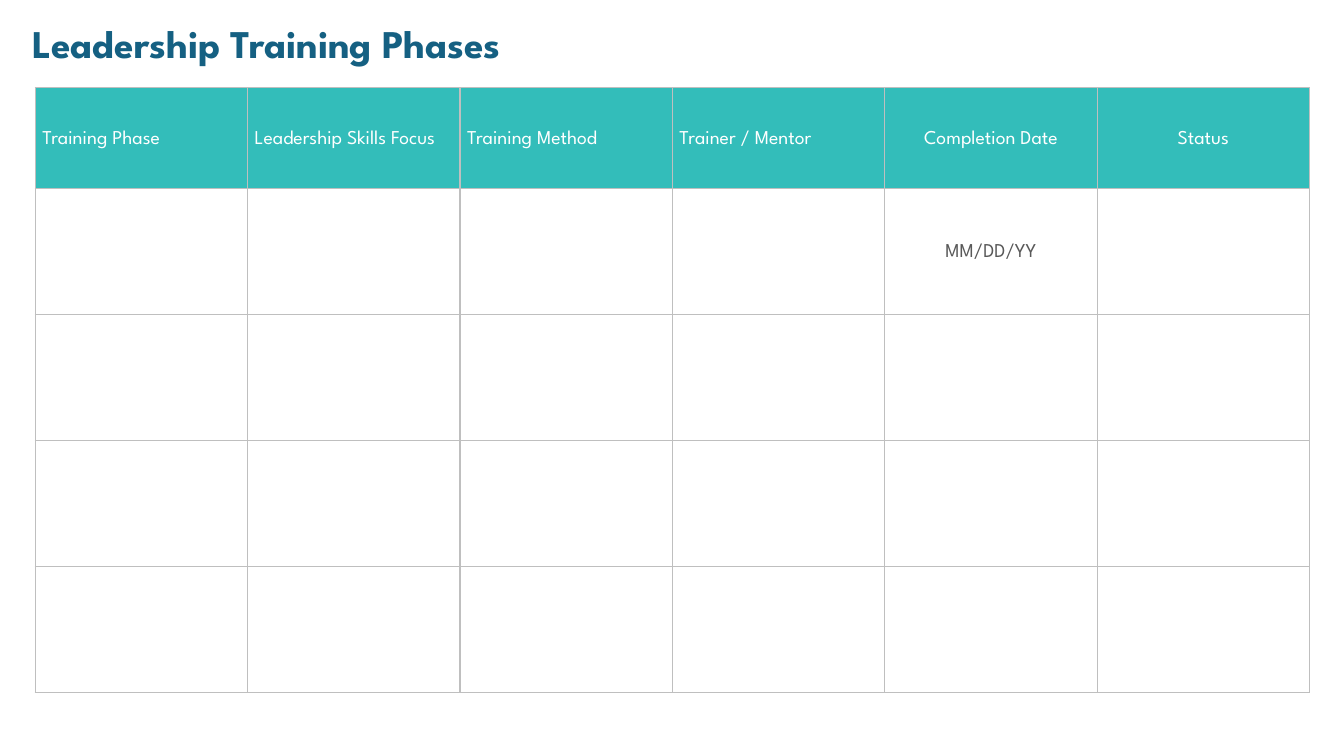
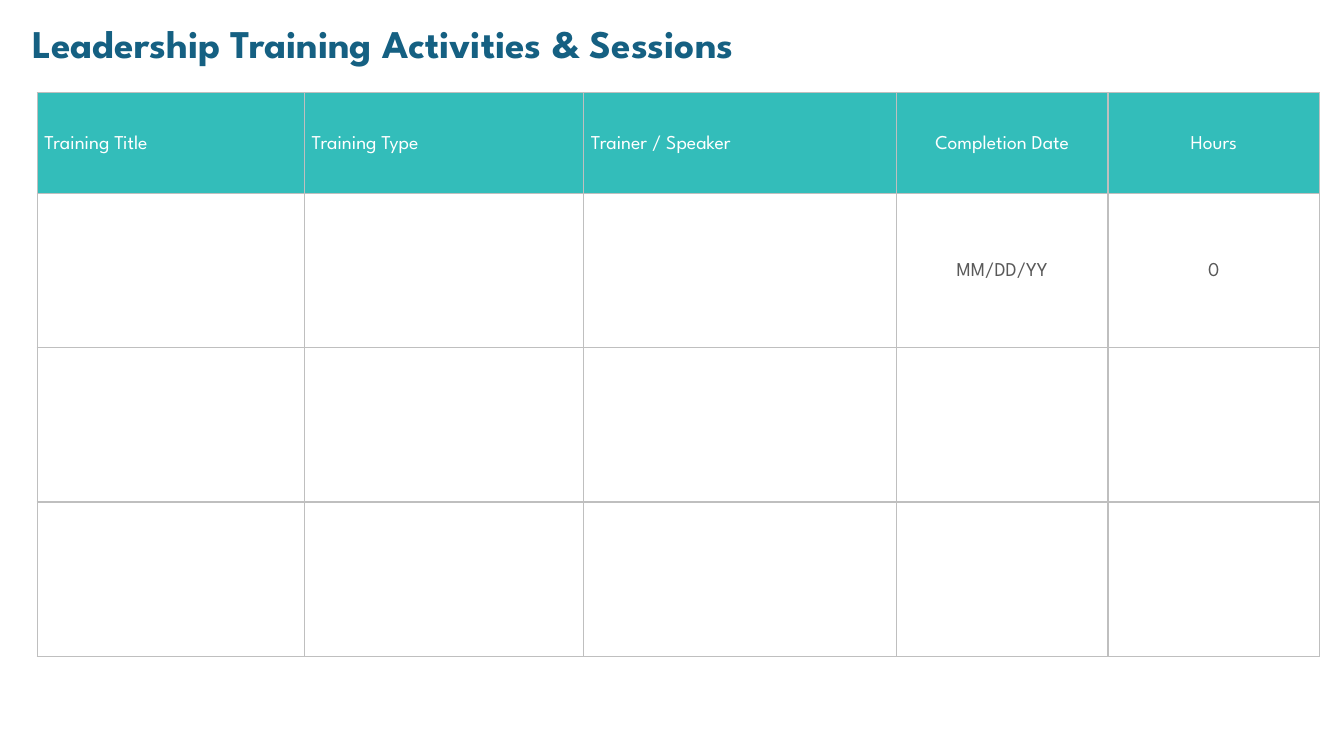
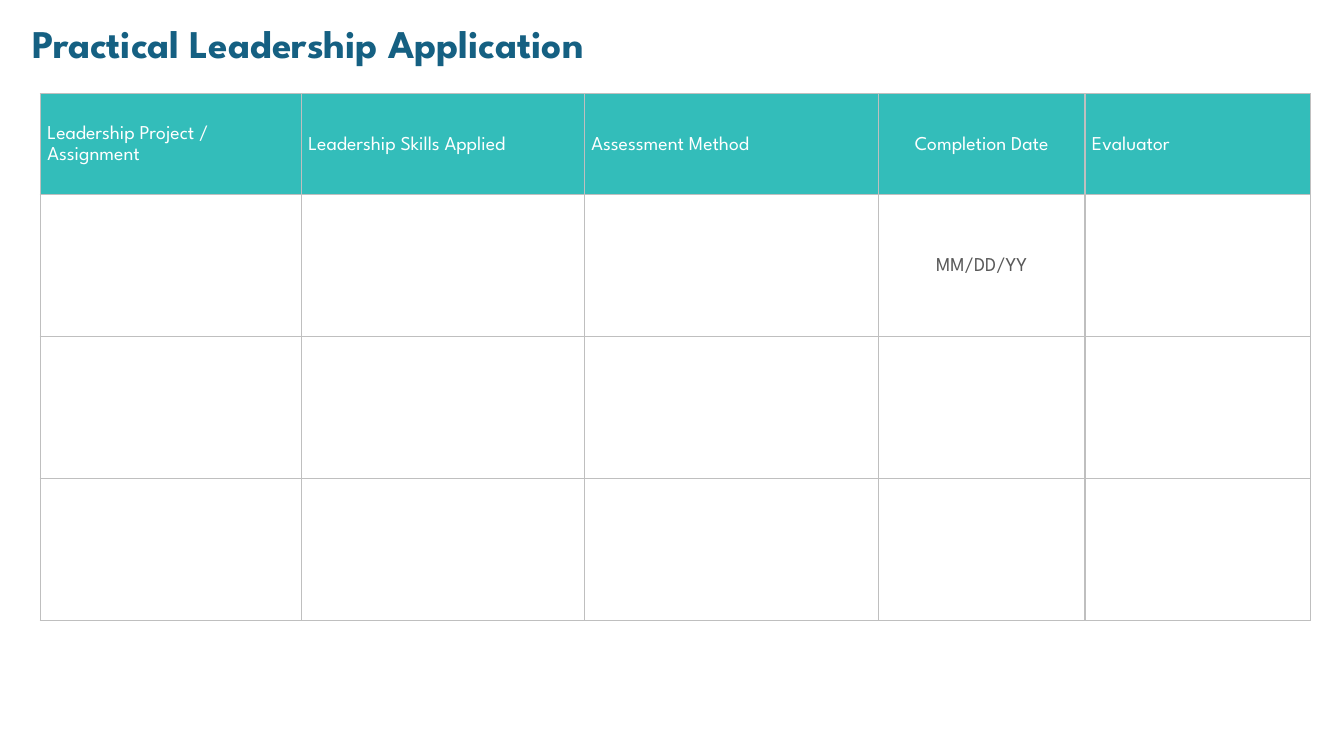
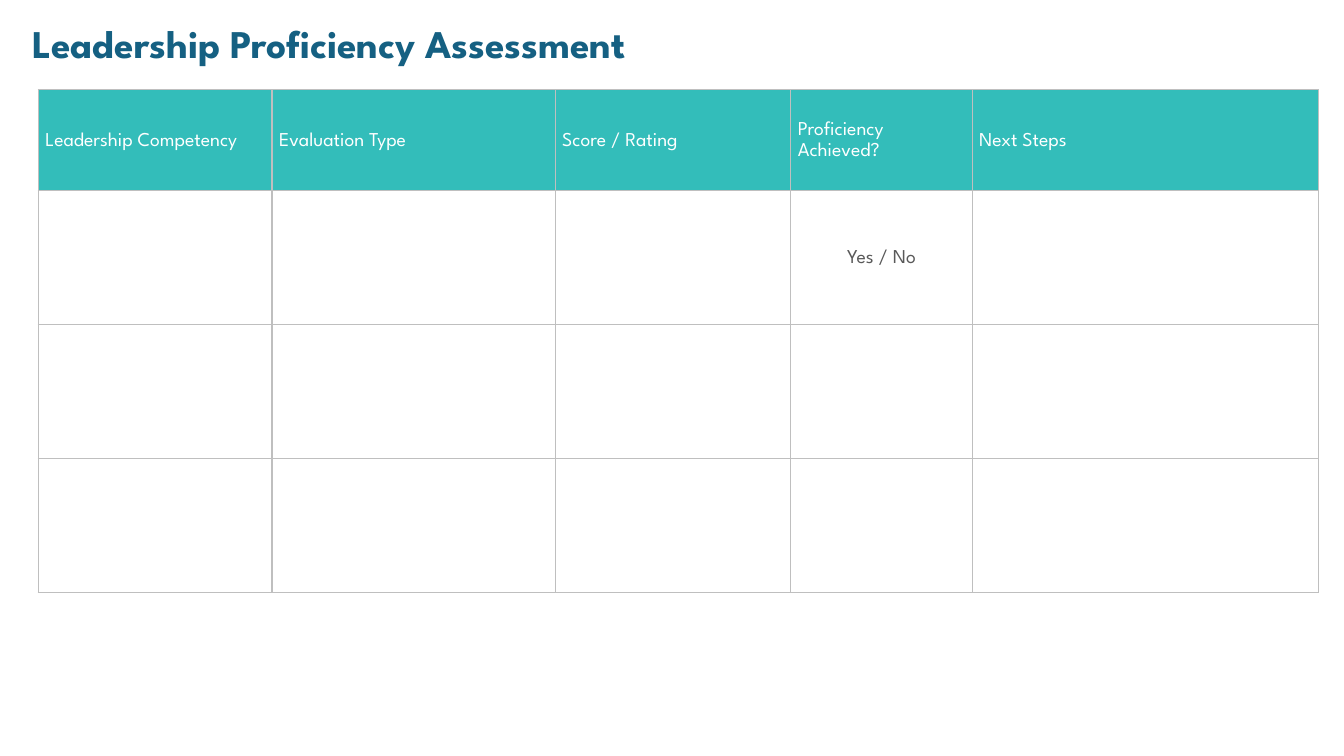
"""Build four leadership training tables as a presentation."""
from dataclasses import dataclass
from typing import Any

from lxml import etree
from pptx import Presentation
from pptx.dml.color import RGBColor
from pptx.enum.text import MSO_ANCHOR, MSO_AUTO_SIZE, PP_ALIGN
from pptx.oxml.ns import qn
from pptx.util import Inches, Pt

LEFT, CENTER = PP_ALIGN.LEFT, PP_ALIGN.CENTER
TOP, MIDDLE = MSO_ANCHOR.TOP, MSO_ANCHOR.MIDDLE
NO_AUTO_SIZE = MSO_AUTO_SIZE.NONE
TITLE_ONLY_LAYOUT = 5
BORDER_TAGS = ("a:lnL", "a:lnR", "a:lnT", "a:lnB")


@dataclass(frozen=True)
class Theme:
    font: str = "League Spartan"
    title_color: str = "156082"
    header_fill: str = "33BDBA"
    header_color: str = "FFFFFF"
    body_color: str = "595959"
    border_color: str = "BFBFBF"
    title_size: float = 28
    cell_size: float = 14
    border_width: float = 1


@dataclass(frozen=True)
class Column:
    heading: str
    weight: float = 1
    alignment: Any = LEFT
    sample: str = ""


@dataclass(frozen=True)
class TableSlide:
    title: str
    left: float
    top: float
    width: float
    body_rows: int
    body_height: float
    columns: tuple[Column, ...]


THEME = Theme()
SLIDE_WIDTH, SLIDE_HEIGHT = Inches(13.33), Inches(7.5)
HEADER_HEIGHT = 1
TITLE_PLACE = {"left": Inches(0.22), "top": Inches(0.14), "width": Inches(8.08), "height": Inches(0.57)}
TITLE_FRAME = {"auto_size": NO_AUTO_SIZE, "vertical_anchor": TOP, "word_wrap": True}
CELL_FORMAT = {
    "vertical_anchor": MIDDLE,
    "margin_left": Inches(0.07),
    "margin_right": Inches(0.07),
    "margin_top": 0,
    "margin_bottom": 0,
}
CELL_PARAGRAPH = {"line_spacing": 1.15, "space_after": Pt(8)}

SLIDES = (
    TableSlide("Leadership Training Phases", 0.35, 0.87, 12.64, 4, 1.25, (
        Column("Training Phase"),
        Column("Leadership Skills Focus"),
        Column("Training Method"),
        Column("Trainer / Mentor"),
        Column("Completion Date", alignment=CENTER, sample="MM/DD/YY"),
        Column("Status", alignment=CENTER),
    )),
    TableSlide("Leadership Training Activities & Sessions", 0.37, 0.92, 12.72, 3, 1.53, (
        Column("Training Title", 2.65),
        Column("Training Type", 2.77),
        Column("Trainer / Speaker", 3.1),
        Column("Completion Date", 2.1, CENTER, "MM/DD/YY"),
        Column("Hours", 2.1, CENTER, "0"),
    )),
    TableSlide("Practical Leadership Application", 0.4, 0.93, 12.6, 3, 1.41, (
        Column("Leadership Project / Assignment", 2.59),
        Column("Leadership Skills Applied", 2.81),
        Column("Assessment Method", 2.92),
        Column("Completion Date", 2.05, CENTER, "MM/DD/YY"),
        Column("Evaluator", 2.24),
    )),
    TableSlide("Leadership Proficiency Assessment", 0.38, 0.89, 12.7, 3, 1.33, (
        Column("Leadership Competency", 2.32),
        Column("Evaluation Type", 2.81),
        Column("Score / Rating", 2.34),
        Column("Proficiency Achieved?", 1.8, sample="Yes / No"),
        Column("Next Steps", 3.44),
    )),
)


def apply_format(target: Any, values: dict[str, Any]) -> None:
    """Set each named attribute on the target."""
    for name, value in values.items():
        setattr(target, name, value)


def write_text(paragraph: Any, text: str, size: float, color: str, bold: bool = False) -> None:
    """Write one run in the theme font."""
    run = paragraph.add_run()
    run.text = text
    apply_format(run.font, {"name": THEME.font, "size": Pt(size), "bold": bold})
    run.font.color.rgb = RGBColor.from_string(color)


def add_title(slide: Any, text: str) -> None:
    """Place and format the title placeholder."""
    title = slide.shapes.title
    apply_format(title, TITLE_PLACE)
    apply_format(title.text_frame, TITLE_FRAME)
    paragraph = title.text_frame.paragraphs[0]
    paragraph.alignment = LEFT
    write_text(paragraph, text, THEME.title_size, THEME.title_color, bold=True)


def add_borders(cell: Any) -> None:
    """Draw a thin line on all four sides of a cell."""
    properties = cell._tc.get_or_add_tcPr()
    for tag in BORDER_TAGS:
        line = etree.SubElement(properties, qn(tag), w=str(Pt(THEME.border_width)))
        fill = etree.SubElement(line, qn("a:solidFill"))
        etree.SubElement(fill, qn("a:srgbClr"), val=THEME.border_color)


def format_cell(cell: Any, text: str, alignment: Any, is_header: bool) -> None:
    """Give a cell its borders, fill and text."""
    apply_format(cell, CELL_FORMAT)
    add_borders(cell)
    if is_header:
        cell.fill.solid()
        cell.fill.fore_color.rgb = RGBColor.from_string(THEME.header_fill)
    else:
        cell.fill.background()
    if text:
        paragraph = cell.text_frame.paragraphs[0]
        apply_format(paragraph, {**CELL_PARAGRAPH, "alignment": alignment})
        color = THEME.header_color if is_header else THEME.body_color
        write_text(paragraph, text, THEME.cell_size, color)


def add_training_table(slide: Any, content: TableSlide) -> None:
    """Add the table with a header row and equal body rows."""
    heights = [HEADER_HEIGHT] + [content.body_height] * content.body_rows
    table = slide.shapes.add_table(
        len(heights), len(content.columns),
        Inches(content.left), Inches(content.top),
        Inches(content.width), Inches(sum(heights)),
    ).table
    table.horz_banding = False
    for row, height in zip(table.rows, heights):
        row.height = Inches(height)
    total_weight = sum(column.weight for column in content.columns)
    for column_index, column in enumerate(content.columns):
        table.columns[column_index].width = Inches(content.width * column.weight / total_weight)
        texts = [column.heading, column.sample] + [""] * (content.body_rows - 1)
        for row_index, text in enumerate(texts):
            is_header = row_index == 0
            alignment = column.alignment if is_header else CENTER
            format_cell(table.cell(row_index, column_index), text, alignment, is_header)


def main() -> None:
    """Build and save the presentation."""
    presentation = Presentation()
    apply_format(presentation, {"slide_width": SLIDE_WIDTH, "slide_height": SLIDE_HEIGHT})
    layout = presentation.slide_layouts[TITLE_ONLY_LAYOUT]
    for content in SLIDES:
        slide = presentation.slides.add_slide(layout)
        add_title(slide, content.title)
        add_training_table(slide, content)
    presentation.save("out.pptx")


if __name__ == "__main__":
    main()
